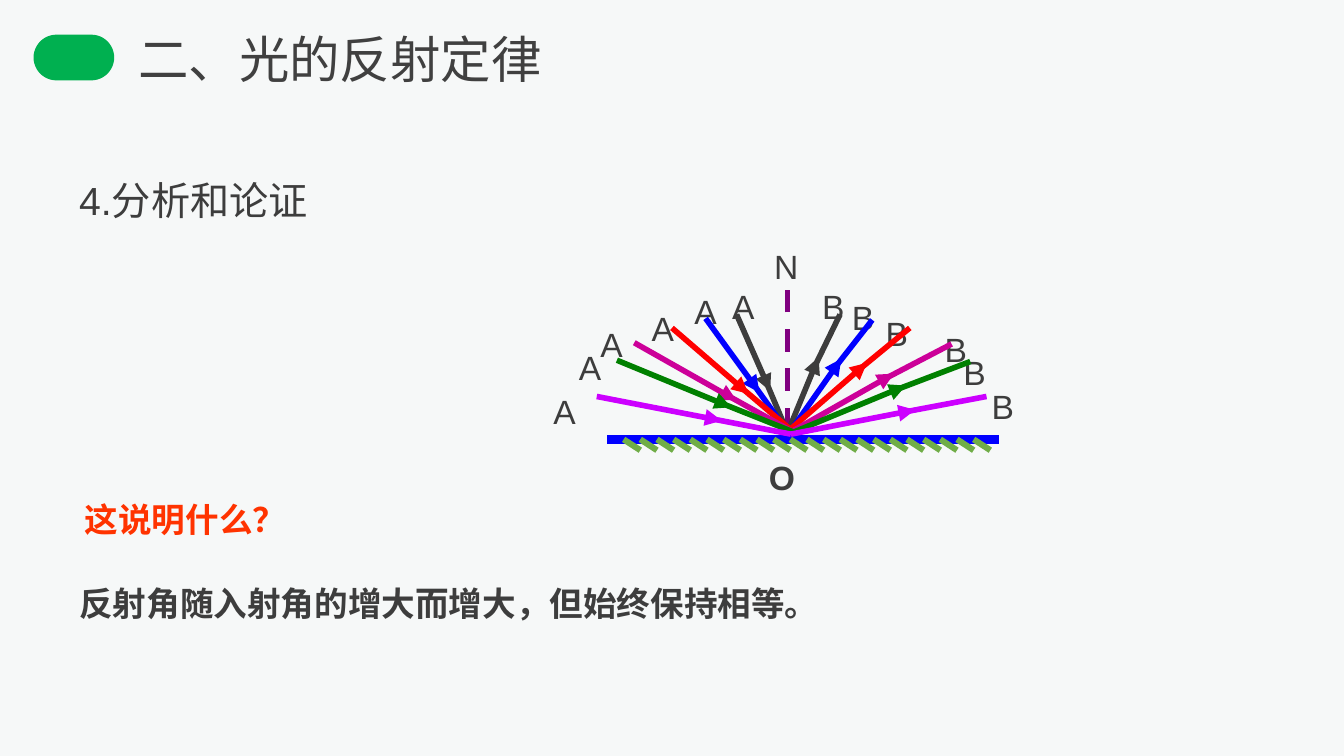
"""Build the slide on the law of reflection of light."""
from lxml.etree import SubElement
from pptx import Presentation
from pptx.dml.color import RGBColor as RGB
from pptx.enum.dml import MSO_LINE_DASH_STYLE as Dash
from pptx.enum.shapes import MSO_CONNECTOR as Conn, MSO_SHAPE as Shape
from pptx.oxml.ns import qn
from pptx.util import Pt

HEX = {"back": "F6F8F8", "badge": "00B050", "ink": "3D3D3D", "title": "404040",
       "ask": "FF3300", "blue": "0000FF", "hatch": "70AD47", "normal": "800080",
       "red": "FF0000", "pink": "CC0099", "green": "008000", "violet": "CC00FF"}

TEXTS = [
    ("二、光的反射定律", (69.1, 12.2, 247.7, 38.2), {"size": 27, "hue": "title"}),
    ("4.分析和论证", (37.4, 91.4, 252, 31), {"size": 21}),
    ("这说明什么？", (40.3, 264.2, 123.1, 27.4),
     {"hue": "ask", "bold": True, "wrap": False}),
    ("反射角随入射角的增大而增大，但始终保持相等。", (37.4, 309.6, 638, 27.4),
     {"bold": True}),
    ("O", (406.8, 241.9, 20.2, 27.4), {"bold": True}),
    ("N", (409.7, 128.9, 20.2, 27.4), {}),
]

MIRROR = {"left": 325.4, "right": 535, "y": 235.4}
HATCH = {"left": 334.1, "step": 8.93, "drop": 5.8, "count": 22}
NORMAL = (421.9, 230.4), (421.9, 154.1)
JOIN = 0.89

RAYS = [
    {"hue": "ink", "foot": (421.9, 231.8),
     "A": ((394.6, 168.5), (412.6, 209.5), (385.2, 149.8, 28)),
     "B": ((450, 168.5), (438.5, 191.5), (433.4, 149.8, 31))},
    {"hue": "blue", "foot": (422.6, 232.2),
     "A": ((378, 170.6), (406.8, 210.2), (365, 152.6, 33)),
     "B": ((467.3, 171.4), (450.7, 192.2), (449.3, 155.5, 36))},
    {"hue": "red", "foot": (423.4, 230),
     "A": ((360, 175.7), (401, 211), (342, 161.3, 43)),
     "B": ((487.4, 175.7), (464.4, 194.4), (467.3, 164.2, 46))},
    {"hue": "pink", "foot": (424.4, 231.1),
     "A": ((339.8, 183.6), (394.6, 214.6), (314.6, 169.9, 46)),
     "B": ((509.8, 184.3), (478.8, 200.2), (499, 172.8, 36))},
    {"hue": "green", "foot": (425.2, 231.5),
     "A": ((330.5, 193), (391.7, 218.2), (303.1, 182.2, 33)),
     "B": ((519.8, 193.7), (485.3, 206.6), (509, 185, 40))},
    {"hue": "violet", "foot": (423.7, 232.6),
     "A": ((319.7, 212.4), (386.6, 225.4), (289.4, 205.9, 37)),
     "B": ((528.5, 212.4), (490.3, 219.6), (524.2, 203, 41))},
]


def color(name):
    return RGB.from_string(HEX[name])


def write(slide, text, place, size=18, hue="ink", bold=False, wrap=True,
          inset=(5.04, 2.88)):
    frame = slide.shapes.add_textbox(*map(Pt, place)).text_frame
    frame.word_wrap = wrap
    frame.margin_left = frame.margin_right = Pt(inset[0])
    frame.margin_top = frame.margin_bottom = Pt(inset[1])
    run = frame.paragraphs[0].add_run()
    run.text = text
    font = run.font
    font.name, font.size, font.bold = "Arial", Pt(size), bold
    font.color.rgb = color(hue)


def draw(slide, start, end, hue, width=3, dash=None, arrow=False):
    link = slide.shapes.add_connector(Conn.STRAIGHT, *map(Pt, start + end))
    line = link.line
    line.color.rgb, line.width = color(hue), Pt(width)
    if dash:
        line.dash_style = dash
    if arrow:
        SubElement(line._get_or_add_ln(), qn("a:tailEnd"), type="triangle")
    SubElement(link._element.spPr, qn("a:effectLst"))


def leg(slide, start, tip, end, hue):
    draw(slide, start, tip, hue, arrow=True)
    join = tuple(a + JOIN * (b - a) for a, b in zip(start, tip))
    draw(slide, join, end, hue)


def mirror(slide):
    y = MIRROR["y"]
    draw(slide, (MIRROR["left"], y), (MIRROR["right"], y), "blue", 4.5)
    for i in range(HATCH["count"]):
        x = HATCH["left"] + i * HATCH["step"]
        draw(slide, (x, y), (x + HATCH["step"], y + HATCH["drop"]), "hatch", 3.25)


def main():
    deck = Presentation()
    deck.slide_width, deck.slide_height = Pt(720), Pt(405)
    slide = deck.slides.add_slide(deck.slide_layouts[6])
    fill = slide.background.fill
    fill.solid()
    fill.fore_color.rgb = color("back")

    badge = slide.shapes.add_shape(Shape.ROUNDED_RECTANGLE,
                                   *map(Pt, (18, 18.6, 43.2, 24.5)))
    badge.adjustments[0] = 0.5
    badge.shadow.inherit = False
    badge.fill.solid()
    badge.fill.fore_color.rgb = color("badge")
    badge.line.fill.background()

    mirror(slide)
    draw(slide, *NORMAL, "normal", dash=Dash.DASH)
    for ray in RAYS:
        hue, foot = ray["hue"], ray["foot"]
        for name in "AB":
            x, y, width = ray[name][2]
            write(slide, name, (x, y, width, 28.8), inset=(7.2, 3.6))
        far, tip, _ = ray["A"]
        leg(slide, far, tip, foot, hue)
        far, tip, _ = ray["B"]
        leg(slide, foot, tip, far, hue)
    for text, place, form in TEXTS:
        write(slide, text, place, **form)
    deck.save("out.pptx")


if __name__ == "__main__":
    main()
